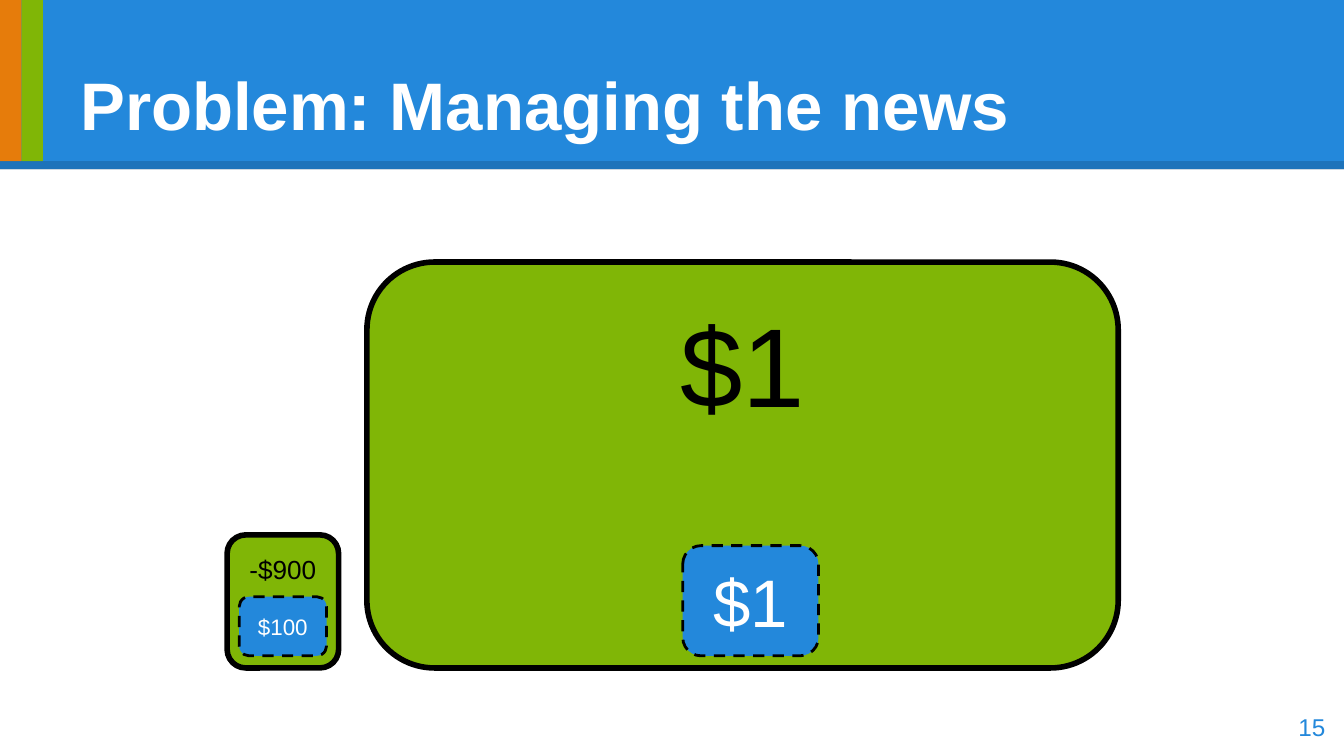
"""Build the slide on managing the news with nested payoff boxes."""
from lxml import etree
from pptx import Presentation
from pptx.dml.color import RGBColor
from pptx.enum.dml import MSO_LINE
from pptx.enum.shapes import MSO_CONNECTOR, MSO_SHAPE
from pptx.enum.text import MSO_ANCHOR, PP_ALIGN
from pptx.oxml.ns import qn
from pptx.util import Inches, Pt

RECT, ROUND = MSO_SHAPE.RECTANGLE, MSO_SHAPE.ROUNDED_RECTANGLE
STRAIGHT = MSO_CONNECTOR.STRAIGHT
DASH = MSO_LINE.DASH
TOP, MIDDLE, BOTTOM = MSO_ANCHOR.TOP, MSO_ANCHOR.MIDDLE, MSO_ANCHOR.BOTTOM
LEFT, CENTER, RIGHT = PP_ALIGN.LEFT, PP_ALIGN.CENTER, PP_ALIGN.RIGHT
BLUE, GREEN, ORANGE = "2388DB", "80B606", "E67C0B"
BLACK, WHITE = "000000", "FFFFFF"


def paint(fmt, color):
    fmt.solid()
    fmt.fore_color.rgb = RGBColor.from_string(color)


def write(sp, text, size, color, bold=False, align=CENTER, anchor=MIDDLE):
    tf = sp.text_frame
    tf.word_wrap = True
    tf.vertical_anchor = anchor
    tf.margin_left = tf.margin_right = tf.margin_top = tf.margin_bottom = Inches(0.1)
    p = tf.paragraphs[0]
    p.alignment = align
    r = p.add_run()
    r.text = text
    r.font.name = "Arial"
    r.font.size = Pt(size)
    r.font.bold = bold
    paint(r.font.fill, color)


prs = Presentation()
prs.slide_width, prs.slide_height = Inches(10), Inches(10 * 9 / 16)
s = prs.slides.add_slide(prs.slide_layouts[6])

bands = [(0, 10, 1.26, BLUE), (0.16, 0.16, 1.2, GREEN), (0, 0.16, 1.2, ORANGE)]
for x, w, h, color in bands:
    sp = s.shapes.add_shape(RECT, Inches(x), Inches(0), Inches(w), Inches(h))
    sp.shadow.inherit = False
    paint(sp.fill, color)
    sp.line.fill.background()

rule = s.shapes.add_connector(STRAIGHT, Inches(0), Inches(1.23), Inches(10), Inches(1.23))
rule.line.width = Pt(4.5)
paint(rule.line.fill, BLACK)
spPr = rule._element.spPr
etree.SubElement(spPr.find(".//" + qn("a:srgbClr")), qn("a:alpha"), val="15000")
etree.SubElement(spPr, qn("a:effectLst"))

title = s.shapes.add_textbox(Inches(0.5), Inches(0.23), Inches(9), Inches(0.94))
write(title, "Problem: Managing the news", 36, WHITE, bold=True, align=LEFT, anchor=BOTTOM)

outer = dict(fill=GREEN, color=BLACK, width=3, dash=None, anchor=TOP)
inner = dict(fill=BLUE, color=WHITE, width=1.5, dash=DASH, anchor=MIDDLE)
boxes = [
    (1.69, 3.98, 0.83, 0.99, "-$900", 14, outer),
    (2.73, 1.95, 5.59, 3.02, "$1", 60, outer),
    (5.08, 4.06, 1.01, 0.82, "$1", 36, inner),
    (1.78, 4.44, 0.65, 0.44, "$100", 12, inner),
]
for x, y, w, h, text, size, style in boxes:
    sp = s.shapes.add_shape(ROUND, Inches(x), Inches(y), Inches(w), Inches(h))
    sp.shadow.inherit = False
    paint(sp.fill, style["fill"])
    paint(sp.line.fill, BLACK)
    sp.line.width = Pt(style["width"])
    if style["dash"]:
        sp.line.dash_style = style["dash"]
    write(sp, text, size, style["color"], anchor=style["anchor"])

number = s.shapes.add_textbox(Inches(9.36), Inches(5.19), Inches(0.6), Inches(0.43))
write(number, "15", 13, BLUE, align=RIGHT)

prs.save("out.pptx")
